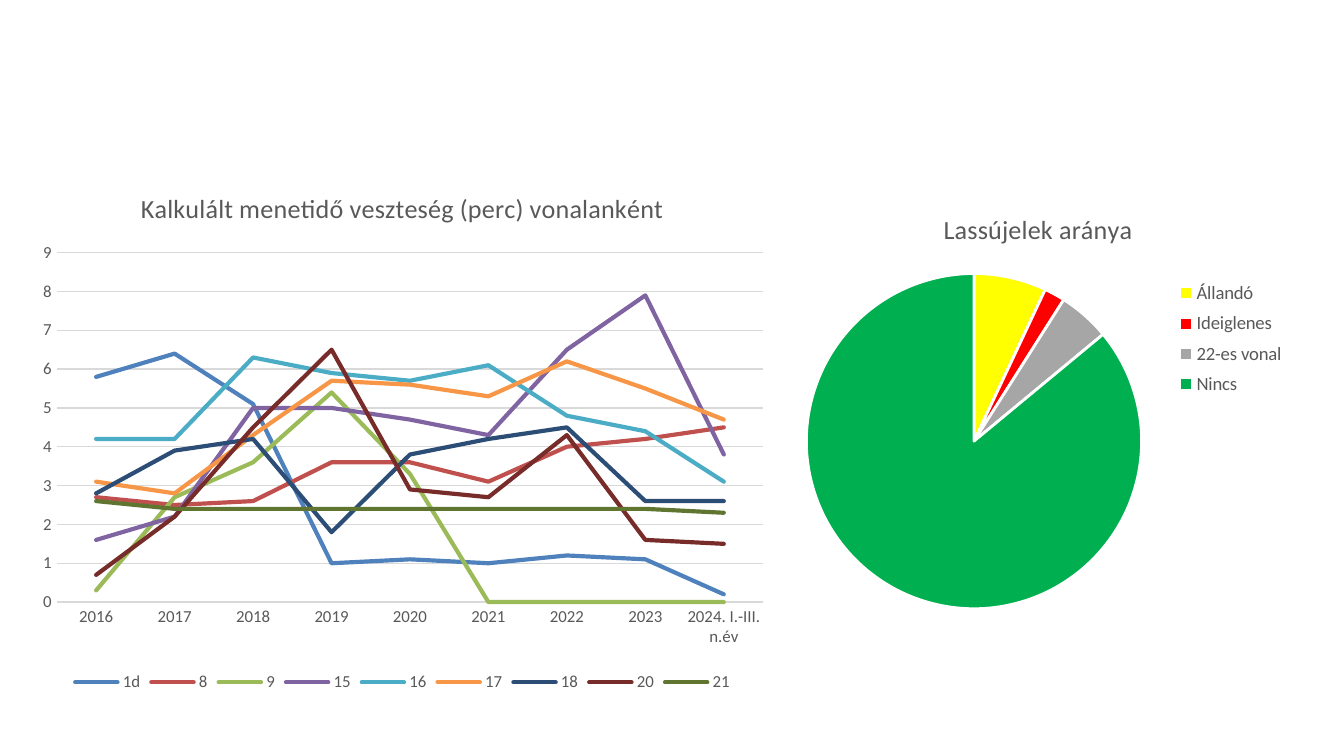
from dataclasses import dataclass

from lxml import etree
from pptx import Presentation
from pptx.chart.data import CategoryChartData
from pptx.dml.color import RGBColor
from pptx.enum.chart import XL_CHART_TYPE as ChartType
from pptx.enum.chart import XL_LEGEND_POSITION as LegendPos
from pptx.enum.chart import XL_TICK_MARK as Tick
from pptx.oxml.ns import qn
from pptx.util import Inches, Pt


@dataclass(frozen=True)
class Theme:
    font: str = "Calibri"
    text: str = "595959"
    grid: str = "D9D9D9"
    edge: str = "FFFFFF"
    title: float = 14
    axis: float = 9
    pie_legend: float = 10
    hairline: float = 0.75
    trend: float = 2.25
    border: float = 1.5


@dataclass(frozen=True)
class Box:
    x: float
    y: float
    w: float
    h: float


@dataclass(frozen=True)
class Series:
    name: str
    color: str
    values: tuple


@dataclass(frozen=True)
class ChartPlan:
    kind: ChartType
    title: str
    box: Box
    plot: Box
    categories: tuple
    series: tuple
    legend: LegendPos
    legend_size: float


THEME = Theme()

LOSSES = ChartPlan(
    ChartType.LINE,
    "Kalkulált menetidő veszteség (perc) vonalanként",
    Box(0.2, 1.25, 5.59, 3.94),
    Box(0.04, 0.16, 0.94, 0.66),
    (*map(str, range(2016, 2024)), "2024. I.-III. n.év"),
    (
        Series("1d", "4F81BD", (5.8, 6.4, 5.1, 1, 1.1, 1, 1.2, 1.1, 0.2)),
        Series("8", "C0504D", (2.7, 2.5, 2.6, 3.6, 3.6, 3.1, 4, 4.2, 4.5)),
        Series("9", "9BBB59", (0.3, 2.7, 3.6, 5.4, 3.3, 0, 0, 0, 0)),
        Series("15", "8064A2", (1.6, 2.2, 5, 5, 4.7, 4.3, 6.5, 7.9, 3.8)),
        Series("16", "4BACC6", (4.2, 4.2, 6.3, 5.9, 5.7, 6.1, 4.8, 4.4, 3.1)),
        Series("17", "F79646", (3.1, 2.8, 4.3, 5.7, 5.6, 5.3, 6.2, 5.5, 4.7)),
        Series("18", "2C4D75", (2.8, 3.9, 4.2, 1.8, 3.8, 4.2, 4.5, 2.6, 2.6)),
        Series("20", "772C2A", (0.7, 2.2, 4.5, 6.5, 2.9, 2.7, 4.3, 1.6, 1.5)),
        Series("21", "5F7530", (2.6, 2.4, 2.4, 2.4, 2.4, 2.4, 2.4, 2.4, 2.3)),
    ),
    LegendPos.BOTTOM,
    THEME.axis,
)

SHARES = ChartPlan(
    ChartType.PIE,
    "Lassújelek aránya",
    Box(5.45, 1.42, 4.55, 3.24),
    Box(0.12, 0.19, 0.55, 0.77),
    ("Állandó", "Ideiglenes", "22-es vonal", "Nincs"),
    (Series("Series 1", "", (7, 2, 5, 86)),),
    LegendPos.RIGHT,
    THEME.pie_legend,
)
SHARE_COLORS = ("FFFF00", "FF0000", "A6A6A6", "00B050")
SHARE_LEGEND = Box(0.72, 0.19, 0.19, 0.3)


def style_font(font, size: float) -> None:
    formats = {"name": THEME.font, "size": Pt(size), "bold": False}
    for key, value in formats.items():
        setattr(font, key, value)
    font.color.rgb = RGBColor.from_string(THEME.text)


def style_line(line, color: str, width: float) -> None:
    line.color.rgb = RGBColor.from_string(color)
    line.width = Pt(width)


def set_layout(parent, box: Box, before: tuple, inner: bool = False) -> None:
    for old in parent.findall(qn("c:layout")):
        parent.remove(old)
    layout = etree.Element(qn("c:layout"))
    manual = etree.SubElement(layout, qn("c:manualLayout"))
    values = {"layoutTarget": "inner"} if inner else {}
    values |= {"xMode": "edge", "yMode": "edge"}
    values |= {key: str(getattr(box, key)) for key in "xywh"}
    for key, value in values.items():
        etree.SubElement(manual, qn(f"c:{key}")).set("val", value)
    index = sum(child.tag in map(qn, before) for child in parent)
    parent.insert(index, layout)


def add_chart(s, plan: ChartPlan):
    data = CategoryChartData()
    data.categories = plan.categories
    for item in plan.series:
        data.add_series(item.name, item.values)
    b = plan.box
    frame = s.shapes.add_chart(
        plan.kind, Inches(b.x), Inches(b.y), Inches(b.w), Inches(b.h), data
    )
    chart = frame.chart
    style_font(chart.font, plan.legend_size)
    chart.has_title = True
    p = chart.chart_title.text_frame.paragraphs[0]
    r = p.add_run()
    r.text = plan.title
    style_font(r.font, THEME.title)
    chart.chart_title.include_in_layout = False
    chart.has_legend = True
    chart.legend.position = plan.legend
    chart.legend.include_in_layout = False
    style_font(chart.legend.font, plan.legend_size)
    area = chart.plots[0]._element.getparent()
    set_layout(area, plan.plot, (), inner=True)
    return chart


def format_losses(chart) -> None:
    for axis in (chart.category_axis, chart.value_axis):
        axis.major_tick_mark = axis.minor_tick_mark = Tick.NONE
        style_font(axis.tick_labels.font, THEME.axis)
    style_line(chart.category_axis.format.line, THEME.grid, THEME.hairline)
    value_axis = chart.value_axis
    scale = {"minimum_scale": 0, "maximum_scale": 9, "major_unit": 1}
    for key, value in scale.items():
        setattr(value_axis, key, value)
    value_axis.format.line.fill.background()
    style_line(value_axis.major_gridlines.format.line, THEME.grid, THEME.hairline)
    for series, item in zip(chart.plots[0].series, LOSSES.series):
        series.smooth = False
        style_line(series.format.line, item.color, THEME.trend)
        series.format.line._get_or_add_ln().set("cap", "rnd")


def format_shares(chart) -> None:
    series = chart.plots[0].series[0]
    for i, color in enumerate(SHARE_COLORS):
        fmt = series.points[i].format
        fmt.fill.solid()
        fmt.fill.fore_color.rgb = RGBColor.from_string(color)
        style_line(fmt.line, THEME.edge, THEME.border)
    set_layout(chart.legend._element, SHARE_LEGEND, ("c:legendPos", "c:legendEntry"))


def main() -> None:
    prs = Presentation()
    prs.slide_width = Inches(10)
    prs.slide_height = Inches(10 * 9 / 16)
    s = prs.slides.add_slide(prs.slide_layouts[6])
    format_losses(add_chart(s, LOSSES))
    format_shares(add_chart(s, SHARES))
    prs.save("out.pptx")


if __name__ == "__main__":
    main()
